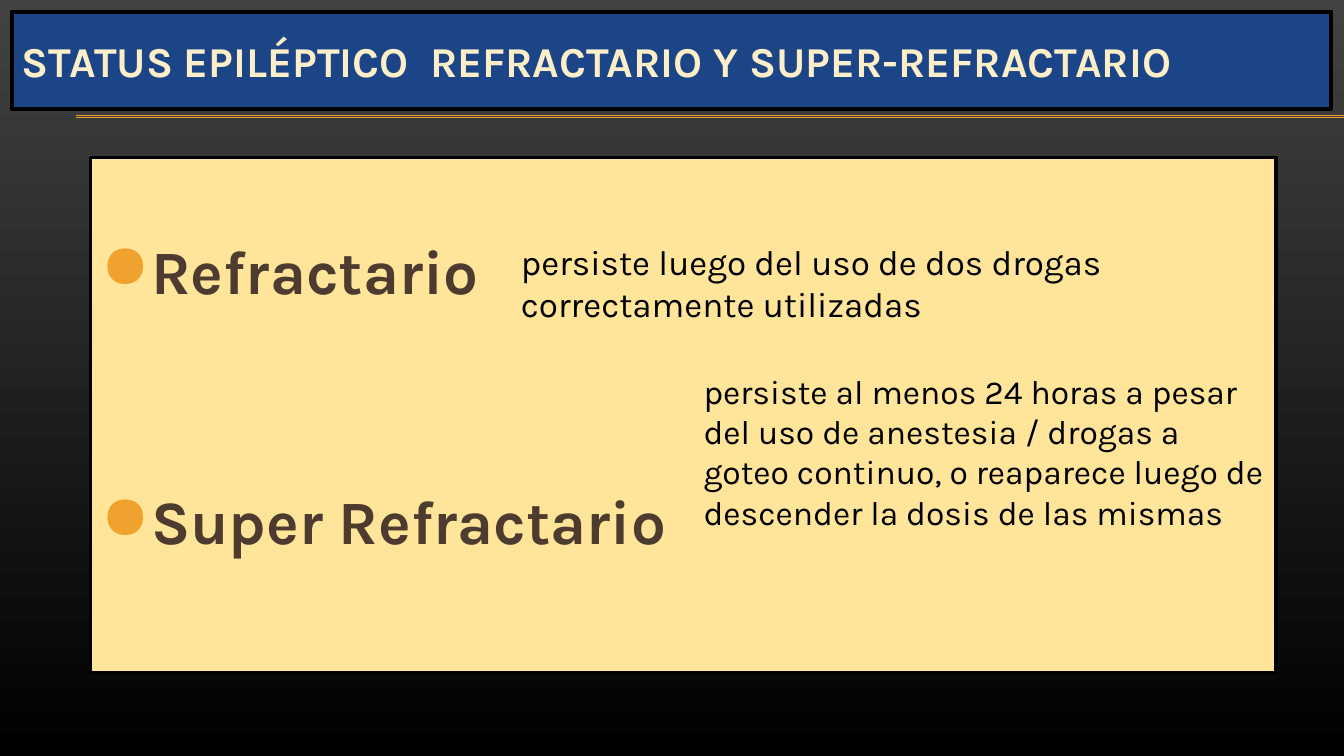
"""Builds the slide on refractory and super-refractory status epilepticus."""
import pptx
import pptx.dml.color
import pptx.enum.shapes
import pptx.enum.text
import pptx.oxml
import pptx.oxml.ns
import pptx.util

Cm = pptx.util.Cm
Pt = pptx.util.Pt
ANCHOR = pptx.enum.text.MSO_ANCHOR
RECTANGLE = pptx.enum.shapes.MSO_SHAPE.RECTANGLE

TITLE = "STATUS EPILÉPTICO  REFRACTARIO Y SUPER-REFRACTARIO"
TERMS = ["Refractario", "Super Refractario"]
DEFINITIONS = [
    ("persiste luego del uso de dos drogas correctamente utilizadas",
     (12.88, 5.82, 17.8, 2.64), "definition"),
    ("persiste al menos 24 horas a pesar del uso de anestesia / drogas a "
     "goteo continuo, o reaparece luego de descender la dosis de las mismas",
     (17.48, 9.09, 14.68, 5.64), "long_definition"),
]

PAGE_SIZE = (33.87, 19.05)
TITLE_AREA = (0.3, 0.3, 33.25, 2.44)
PANEL_AREA = (2.29, 3.96, 29.87, 12.98)
RULE_LEFT = 1.91
RULE_HEIGHTS = (2.92, 2.95)
TITLE_INSETS = (0.25, 0.13, 0.25, 0.13)
PANEL_INSETS = (0.25, 1.9, 0.25, 0.13)
DEFINITION_INSETS = (0.25, 0.25, 0.25, 0.25)
TERM_MARGIN, TERM_INDENT = 1.27, -1.42
TERM_GAP = 132

THEME = {
    "backdrop": ("424242", "010101"),
    "banner": "1C4587",
    "panel": "FFE599",
    "outline": "000000",
    "accent": "F0A22E",
    "title": {"name": "Karla", "size": 30.4, "bold": True, "color": "FBEEC9"},
    "term": {"name": "Karla", "size": 44, "bold": True, "color": "4E3B30"},
    "definition": {"name": "Karla", "size": 25, "bold": False, "color": "000000"},
    "long_definition": {"name": "Karla", "size": 24, "bold": False, "color": "000000"},
}


def rgb(value):
    """Turn a hex string into a colour."""
    return pptx.dml.color.RGBColor.from_string(value)


def style_font(font, style):
    """Apply one text style of the theme."""
    values = {"name": style["name"], "size": Pt(style["size"]), "bold": style["bold"]}
    for key, value in values.items():
        setattr(font, key, value)
    font.color.rgb = rgb(style["color"])


def set_frame(box, insets, anchor):
    """Set wrapping, insets and anchoring of a box's text."""
    left, top, right, bottom = (Cm(inset) for inset in insets)
    values = {
        "word_wrap": True, "vertical_anchor": anchor,
        "margin_left": left, "margin_top": top,
        "margin_right": right, "margin_bottom": bottom,
    }
    for key, value in values.items():
        setattr(box.text_frame, key, value)


def write(para, text, style):
    """Write left-aligned text in one style of the theme."""
    para.alignment = pptx.enum.text.PP_ALIGN.LEFT
    span = para.add_run()
    span.text = text
    style_font(span.font, THEME[style])


def add_bullet(para):
    """Give a paragraph a hanging accent bullet."""
    properties = para._p.get_or_add_pPr()
    properties.set("marL", str(Cm(TERM_MARGIN)))
    properties.set("indent", str(Cm(TERM_INDENT)))
    namespace = pptx.oxml.ns.nsdecls("a")
    for markup in (
        f'<a:buClr {namespace}><a:srgbClr val="{THEME["accent"]}"/></a:buClr>',
        f'<a:buChar {namespace} char="●"/>',
    ):
        properties.append(pptx.oxml.parse_xml(markup))


def add_block(page, area, fill, line_width):
    """Add a filled rectangle with a dark outline."""
    block = page.shapes.add_shape(RECTANGLE, *(Cm(length) for length in area))
    block.shadow.inherit = False
    block.fill.solid()
    block.fill.fore_color.rgb = rgb(THEME[fill])
    block.line.color.rgb = rgb(THEME["outline"])
    block.line.width = Pt(line_width)
    return block


def add_rule(page, height):
    """Add a thin accent line running to the right edge."""
    rule = page.shapes.add_connector(
        pptx.enum.shapes.MSO_CONNECTOR.STRAIGHT,
        Cm(RULE_LEFT), Cm(height), Cm(PAGE_SIZE[0]), Cm(height))
    rule.line.color.rgb = rgb(THEME["accent"])
    rule.line.width = Pt(0.75)
    effects = f'<a:effectLst {pptx.oxml.ns.nsdecls("a")}/>'
    rule._element.spPr.append(pptx.oxml.parse_xml(effects))


def paint_background(page):
    """Fill the page with a gradient from top to bottom."""
    fill = page.background.fill
    fill.gradient()
    fill.gradient_angle = 270
    for position, (stop, color) in enumerate(zip(fill.gradient_stops, THEME["backdrop"])):
        stop.position = position
        stop.color.rgb = rgb(color)


def main():
    """Build and save the deck."""
    deck = pptx.Presentation()
    deck.slide_width, deck.slide_height = (Cm(length) for length in PAGE_SIZE)
    page = deck.slides.add_slide(deck.slide_layouts[6])
    paint_background(page)
    for height in RULE_HEIGHTS:
        add_rule(page, height)

    banner = add_block(page, TITLE_AREA, "banner", 3)
    set_frame(banner, TITLE_INSETS, ANCHOR.MIDDLE)
    write(banner.text_frame.paragraphs[0], TITLE, "title")

    panel = add_block(page, PANEL_AREA, "panel", 2.25)
    set_frame(panel, PANEL_INSETS, ANCHOR.TOP)
    for index, term in enumerate(TERMS):
        frame = panel.text_frame
        para = frame.add_paragraph() if index else frame.paragraphs[0]
        if index:
            para.space_before = Pt(TERM_GAP)
            para.line_spacing = 0.9
        add_bullet(para)
        write(para, term, "term")

    for text, area, style in DEFINITIONS:
        box = page.shapes.add_textbox(*(Cm(length) for length in area))
        set_frame(box, DEFINITION_INSETS, ANCHOR.TOP)
        write(box.text_frame.paragraphs[0], text, style)

    deck.save("out.pptx")


if __name__ == "__main__":
    main()
